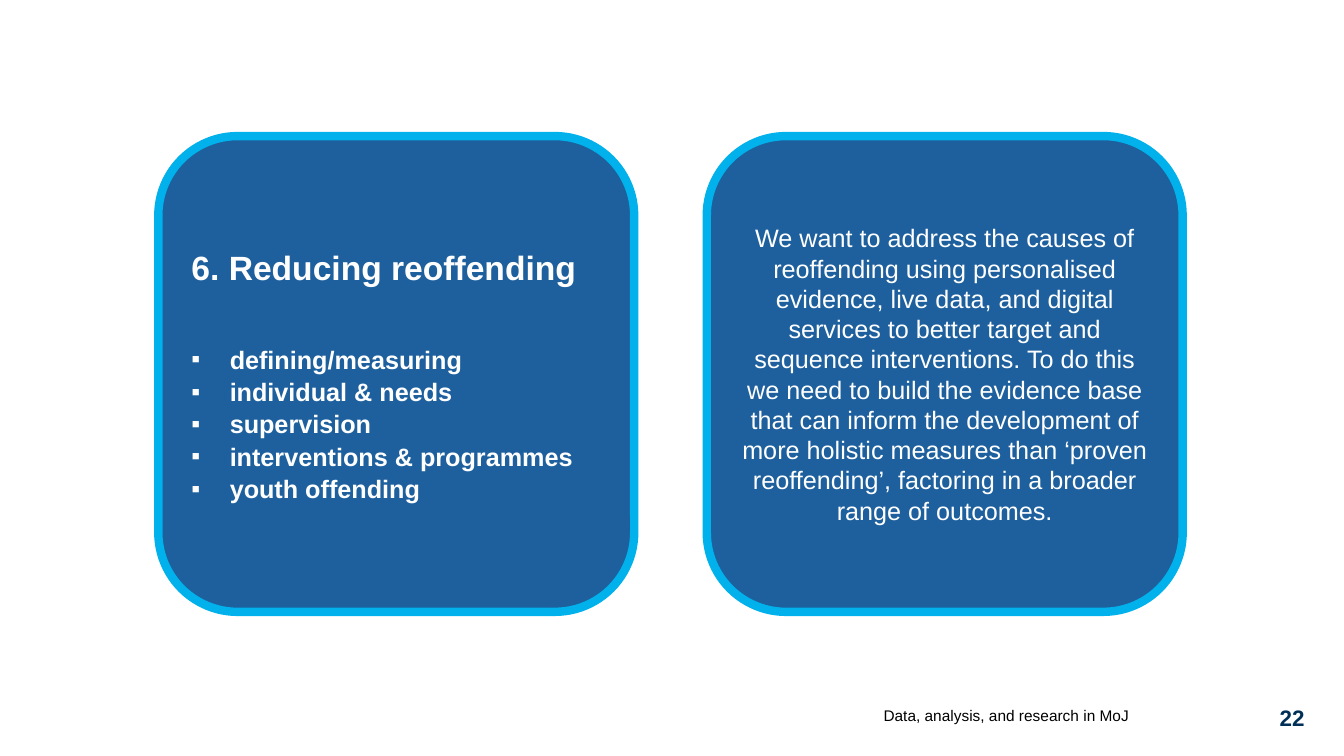
from lxml import etree
from pptx import Presentation
from pptx.dml.color import RGBColor
from pptx.enum.shapes import MSO_SHAPE
from pptx.enum.text import MSO_ANCHOR, PP_ALIGN
from pptx.oxml.ns import qn
from pptx.util import Inches, Pt

ROUNDED = MSO_SHAPE.ROUNDED_RECTANGLE
MIDDLE, TOP = MSO_ANCHOR.MIDDLE, MSO_ANCHOR.TOP
LEFT, CENTER, RIGHT = PP_ALIGN.LEFT, PP_ALIGN.CENTER, PP_ALIGN.RIGHT

FONT = "Arial"
COLORS = {
    "card": "1D609D",
    "border": "00B1EB",
    "card_text": "FFFFFF",
    "footer": "000000",
    "page_number": "003057",
}

CARD_SIZE = 4.72
CARD_TOP = 1.35
FIRST_CARD_LEFT = 1.57
CARD_GAP = 0.72
BULLET_INDENT = 0.38
TOPIC_LINE_SPACING = 1.07

HEADING = "6. Reducing reoffending"
TOPICS = [
    "defining/measuring",
    "individual & needs",
    "supervision",
    "interventions & programmes",
    "youth offending",
]
AIM = (
    "We want to address the causes of reoffending using personalised evidence, "
    "live data, and digital services to better target and sequence interventions. "
    "To do this we need to build the evidence base that can inform the development "
    "of more holistic measures than ‘proven reoffending’, factoring in a broader "
    "range of outcomes."
)


def color(name):
    return RGBColor.from_string(COLORS[name])


def write(paragraph, text, size, color_name, align, bold=False):
    paragraph.text = text
    paragraph.alignment = align
    font = paragraph.runs[0].font
    font.name, font.size, font.bold = FONT, Pt(size), bold
    font.color.rgb = color(color_name)


def add_square_bullet(paragraph):
    properties = paragraph._p.get_or_add_pPr()
    properties.set("marL", str(Inches(BULLET_INDENT)))
    properties.set("indent", str(-Inches(BULLET_INDENT)))
    etree.SubElement(properties, qn("a:buFont"), typeface=FONT)
    etree.SubElement(properties, qn("a:buChar"), char="▪")
    tabs = etree.SubElement(properties, qn("a:tabLst"))
    etree.SubElement(tabs, qn("a:tab"), pos=str(Inches(0.25)), algn="l")


def add_card(slide, left, top, size):
    """Draw one bordered card and return its text frame."""
    card = slide.shapes.add_shape(
        ROUNDED, Inches(left), Inches(top), Inches(size), Inches(size))
    card.shadow.inherit = False
    card.fill.solid()
    card.fill.fore_color.rgb = color("card")
    card.line.color.rgb = color("border")
    card.line.width = Pt(6)
    frame = card.text_frame
    frame.word_wrap = True
    frame.vertical_anchor = MIDDLE
    return frame


def add_topics_card(slide, left, top, size):
    frame = add_card(slide, left, top, size)
    heading = frame.paragraphs[0]
    write(heading, HEADING, 24, "card_text", LEFT, bold=True)
    heading.line_spacing = TOPIC_LINE_SPACING
    heading.space_after = Pt(39)
    for topic in TOPICS:
        paragraph = frame.add_paragraph()
        add_square_bullet(paragraph)
        write(paragraph, topic, 18, "card_text", LEFT, bold=True)
        paragraph.line_spacing = TOPIC_LINE_SPACING


def add_aim_card(slide, left, top, size):
    frame = add_card(slide, left, top, size)
    write(frame.paragraphs[0], AIM, 18, "card_text", CENTER)


def add_label(slide, box, anchor, text, size, color_name, align, bold=False):
    """Add a single line of text without margins in box (left, top, width, height)."""
    frame = slide.shapes.add_textbox(*map(Inches, box)).text_frame
    frame.margin_left = frame.margin_right = 0
    frame.margin_top = frame.margin_bottom = 0
    frame.word_wrap = True
    frame.vertical_anchor = anchor
    write(frame.paragraphs[0], text, size, color_name, align, bold)


def add_footer(slide, left, top):
    add_label(slide, (left, top, 3.11, 0.36), MIDDLE,
              "Data, analysis, and research in MoJ", 11, "footer", RIGHT)
    add_label(slide, (left + 4.53, top + 0.07, 0.39, 0.28), TOP,
              "22", 16, "page_number", CENTER, bold=True)


def main():
    presentation = Presentation()
    presentation.slide_width = Inches(13.33)
    presentation.slide_height = Inches(7.5)
    blank_layout = presentation.slide_layouts[6]
    slide = presentation.slides.add_slide(blank_layout)

    add_footer(slide, 8.09, 6.92)
    for column, add_content in enumerate((add_topics_card, add_aim_card)):
        left = FIRST_CARD_LEFT + column * (CARD_SIZE + CARD_GAP)
        add_content(slide, left, CARD_TOP, CARD_SIZE)

    presentation.save("out.pptx")


if __name__ == "__main__":
    main()
